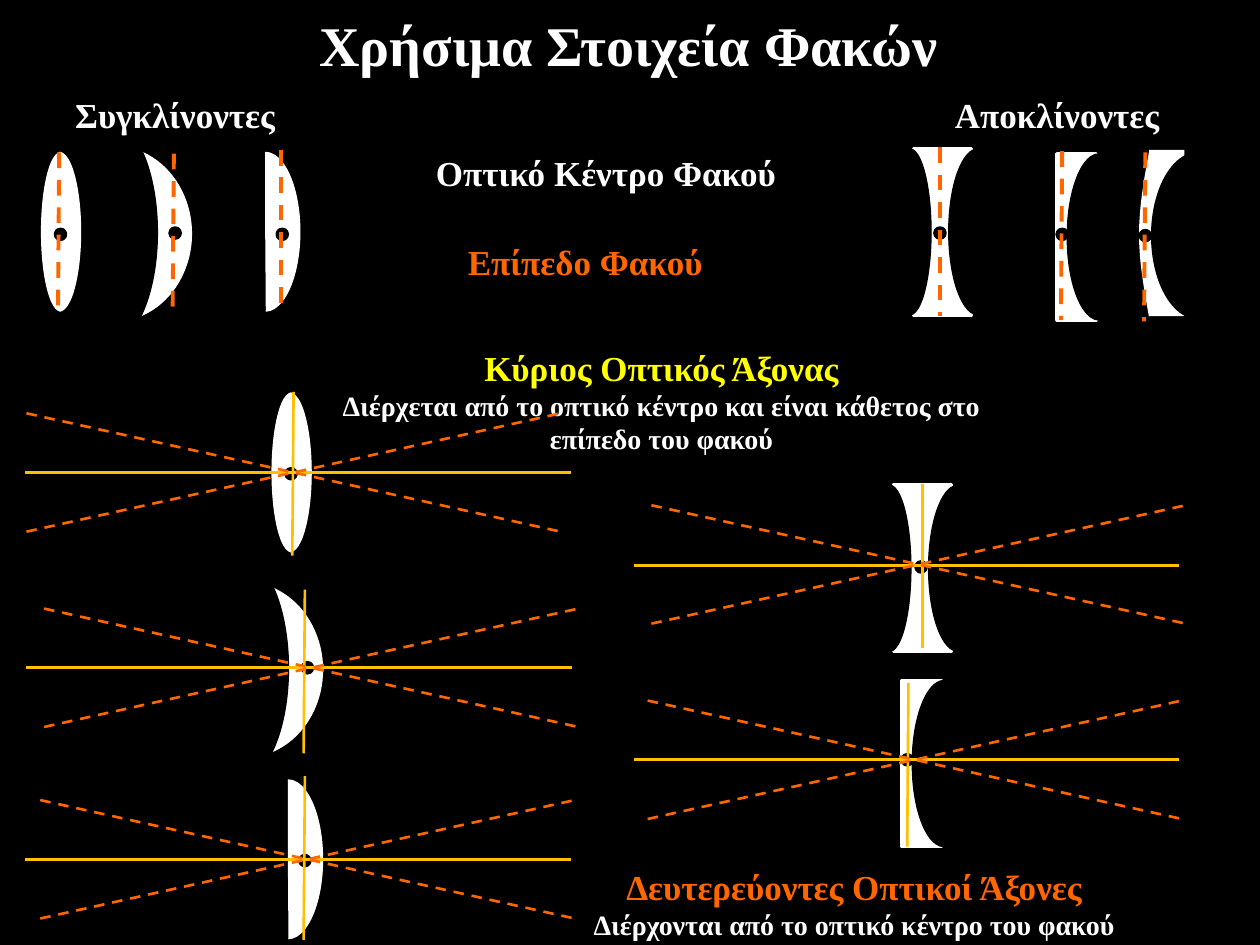
from lxml.etree import SubElement
from pptx import Presentation
from pptx.dml.color import RGBColor
from pptx.enum.dml import MSO_LINE
from pptx.enum.shapes import MSO_CONNECTOR, MSO_SHAPE
from pptx.enum.text import MSO_ANCHOR, PP_ALIGN
from pptx.oxml.ns import qn
from pptx.util import Inches, Pt

COLORS = {
    "black": "000000",
    "white": "FFFFFF",
    "yellow": "FFFF00",
    "gold": "FFC000",
    "orange": "FF6600",
}
RGB = {name: RGBColor.from_string(value) for name, value in COLORS.items()}
FONT = "Times New Roman"

presentation = Presentation()
presentation.slide_width, presentation.slide_height = Inches(10), Inches(7.5)
slide = presentation.slides.add_slide(presentation.slide_layouts[5])
slide.background.fill.solid()
slide.background.fill.fore_color.rgb = RGB["black"]


def add_piece(kind, left, top, width, height, color, line_width):
    """Add a rectangle, a dot, or the right ("arc") or left ("left arc") half of an ellipse."""
    preset = {"rect": MSO_SHAPE.RECTANGLE, "dot": MSO_SHAPE.OVAL}.get(kind, MSO_SHAPE.ARC)
    shape = slide.shapes.add_shape(
        preset, Inches(left), Inches(top), Inches(width), Inches(height))
    if preset == MSO_SHAPE.ARC:
        shape.adjustments[0] = 162
        shape.adjustments[1] = 53.74
    if kind == "left arc":
        shape.element.spPr.get_or_add_xfrm().set("flipH", "1")
    shape.shadow.inherit = False
    shape.fill.solid()
    shape.fill.fore_color.rgb = RGB[color]
    if line_width:
        shape.line.color.rgb = RGB[color]
        shape.line.width = Pt(line_width)
    else:
        shape.line.fill.background()


def add_line(x1, y1, x2, y2, color, width=1.5, dashed=False):
    line = slide.shapes.add_connector(
        MSO_CONNECTOR.STRAIGHT, Inches(x1), Inches(y1), Inches(x2), Inches(y2))
    line.line.color.rgb = RGB[color]
    line.line.width = Pt(width)
    if dashed:
        line.line.dash_style = MSO_LINE.DASH
    SubElement(line.element.spPr, qn("a:effectLst"))


# Title
title = slide.shapes.title
title.left, title.top = Inches(-0.01), Inches(0.02)
title.width, title.height = Inches(10), Inches(0.66)
title.text_frame.text = "Χρήσιμα Στοιχεία Φακών"
title.text_frame.vertical_anchor = MSO_ANCHOR.MIDDLE
paragraph = title.text_frame.paragraphs[0]
paragraph.alignment = PP_ALIGN.CENTER
paragraph.font.name, paragraph.font.size, paragraph.font.bold = FONT, Pt(32), True
paragraph.font.color.rgb = RGB["white"]

# Lens profiles: kind, offset x, offset y, width, height, colour, line width
PROFILES = {
    "biconvex": [("arc", 0, 0, 0.34, 1.26, "white", 0.75),
                 ("left arc", 0.03, 0, 0.31, 1.26, "white", 0.75)],
    "convex meniscus": [("arc", 0, 0, 1.24, 1.39, "white", 0.75),
                        ("arc", 0.2, -0.2, 0.77, 1.77, "black", 0.75)],
    "plano-convex": [("arc", 0, 0, 0.55, 1.26, "white", 0.75)],
    "biconcave": [("rect", 0, 0, 0.46, 1.32, "white", 2),
                  ("arc", -0.2, 0, 0.34, 1.32, "black", 0.75),
                  ("left arc", 0.28, 0, 0.47, 1.32, "black", 0.75)],
    "plano-concave": [("rect", 0, 0, 0.31, 1.32, "white", 2),
                      ("left arc", 0.08, 0, 0.51, 1.32, "black", 0.75)],
}
lenses = [
    ("biconvex", 0.3, 1.21), ("convex meniscus", 0.28, 1.16), ("plano-convex", 1.83, 1.21),
    ("biconcave", 7.25, 1.18), ("plano-concave", 8.39, 1.22),
    ("biconvex", 2.13, 3.12), ("convex meniscus", 1.32, 4.62), ("plano-convex", 2.01, 6.19),
    ("biconcave", 7.09, 3.85), ("plano-concave", 7.16, 5.4),
]
for profile, left, top in lenses:
    for kind, dx, dy, *style in PROFILES[profile]:
        add_piece(kind, left + dx, top + dy, *style)

# Concave meniscus: a white block with a bowed edge on each side
add_piece("rect", 9.12, 1.19, 0.28, 1.32, "white", 0)
STEPS = 16
for edge, top, depth, color in [(9.42, 1.21, 0.28, "black"), (9.12, 1.2, 0.08, "white")]:
    points = []
    for step in range(2 * STEPS + 1):
        t = 1 - abs(step / STEPS - 1)
        bow = depth * (1.5 * t - 0.5 * t ** 3)
        points.append((Inches(edge - bow), Inches(top + 0.66 * step / STEPS)))
    builder = slide.shapes.build_freeform(*points[0])
    builder.add_line_segments(points[1:], close=True)
    side = builder.convert_to_shape()
    side.shadow.inherit = False
    side.fill.solid()
    side.fill.fore_color.rgb = RGB[color]
    side.line.fill.background()
add_piece("arc", 9.06, 1.21, 0.82, 1.32, "black", 0.75)
add_piece("left arc", 9.14, 1.21, 0.74, 1.32, "black", 0.75)

# Optical centres
for left, top in [(0.44, 1.82), (1.35, 1.81), (2.2, 1.82),
                  (7.42, 1.81), (8.39, 1.82), (9.05, 1.83),
                  (2.27, 3.72), (2.4, 5.26), (2.38, 6.79), (7.27, 4.46), (7.16, 5.99)]:
    add_piece("dot", left, top, 0.08, 0.08, "black", 2)

# Headings with their explanations
labels = [
    (0.49, 0.69, 1.8, 0.44, "white", ["Συγκλίνοντες"]),
    (7.37, 0.69, 2.04, 0.44, "white", ["Αποκλίνοντες"]),
    (3.36, 1.15, 2.9, 0.44, "white", ["Οπτικό Κέντρο Φακού"]),
    (3.55, 1.86, 2.19, 0.44, "orange", ["Επίπεδο Φακού"]),
    (2.62, 2.7, 5.26, 0.98, "yellow",
     ["Κύριος Οπτικός Άξονας",
      "Διέρχεται από το οπτικό κέντρο και είναι κάθετος στο επίπεδο του φακού"]),
    (4.15, 6.82, 5.26, 0.71, "orange",
     ["Δευτερεύοντες Οπτικοί Άξονες", "Διέρχονται από το οπτικό κέντρο του φακού"]),
]
for left, top, width, height, color, texts in labels:
    box = slide.shapes.add_textbox(Inches(left), Inches(top), Inches(width), Inches(height))
    box.text_frame.word_wrap = True
    box.text_frame.text = "\n".join(texts)
    for index, paragraph in enumerate(box.text_frame.paragraphs):
        paragraph.alignment = PP_ALIGN.CENTER
        paragraph.font.name, paragraph.font.bold = FONT, True
        paragraph.font.size = Pt(16 if index else 20)
        paragraph.font.color.rgb = RGB["white" if index else color]

# Lens planes through the upper lenses
for x, top, slant, height in [(0.47, 1.21, 0.01, 1.3), (1.38, 1.22, 0.01, 1.3),
                              (2.23, 1.19, 0, 1.3), (7.46, 1.17, 0, 1.34),
                              (8.43, 1.2, 0.01, 1.34), (9.09, 1.21, 0.01, 1.34)]:
    add_line(x, top, x - slant, top + height, "orange", 2.25, dashed=True)

# Lens planes through the lower lenses
for x, top, slant in [(2.33, 3.11, 0.01), (2.42, 4.68, 0.01), (2.42, 6.16, 0.01),
                      (7.32, 3.84, 0), (7.21, 5.42, 0.01)]:
    add_line(x, top, x - slant, top + 1.3, "gold")

# Principal axes
for left, y in [(0.2, 3.75), (0.21, 5.3), (0.2, 6.82), (5.03, 4.49), (5.03, 6.03)]:
    add_line(left, y, left + 4.33, y, "gold")

# Secondary axes, crossing at the optical centre
for left, top in [(0.21, 3.28), (0.35, 4.83), (0.32, 6.35), (5.17, 4.01), (5.14, 5.56)]:
    right, bottom = left + 4.24, top + 0.94
    add_line(left, top, right, bottom, "orange", dashed=True)
    add_line(left, bottom, right, top, "orange", dashed=True)

presentation.save("out.pptx")
